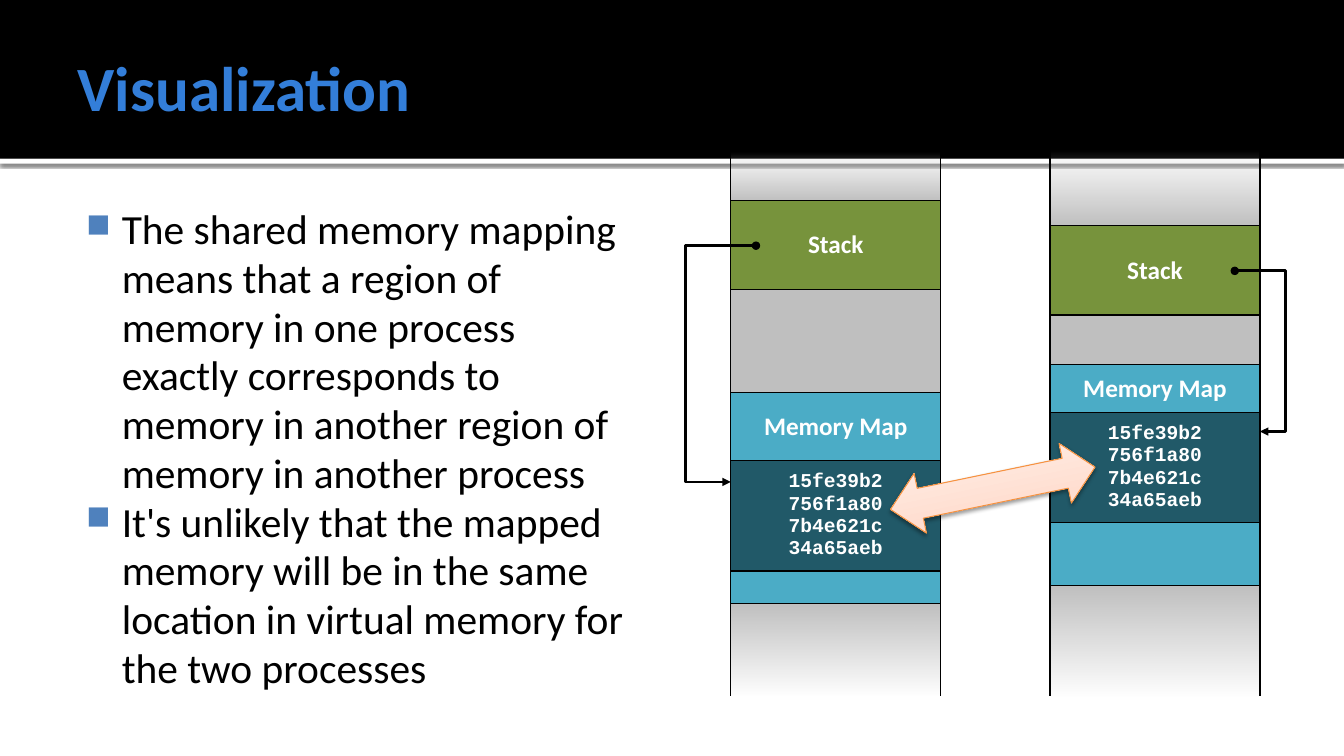
from dataclasses import dataclass

from lxml import etree
from pptx import Presentation
from pptx.dml.color import RGBColor
from pptx.enum.shapes import MSO_CONNECTOR, MSO_SHAPE
from pptx.enum.text import MSO_ANCHOR, PP_ALIGN
from pptx.oxml import parse_xml
from pptx.oxml.ns import nsdecls, qn
from pptx.util import Pt

ELBOW = MSO_CONNECTOR.ELBOW
RECTANGLE = MSO_SHAPE.RECTANGLE
DOUBLE_ARROW = MSO_SHAPE.LEFT_RIGHT_ARROW
MIDDLE = MSO_ANCHOR.MIDDLE
CENTER = PP_ALIGN.CENTER

BLACK = RGBColor(0x00, 0x00, 0x00)
WHITE = RGBColor(0xFF, 0xFF, 0xFF)
TITLE_BLUE = RGBColor(0x33, 0x7E, 0xD9)
BULLET_BLUE = RGBColor(0x4F, 0x81, 0xBD)
UNUSED_GRAY = RGBColor(0xBF, 0xBF, 0xBF)
STACK_GREEN = RGBColor(0x77, 0x93, 0x3C)
MAP_TEAL = RGBColor(0x4B, 0xAC, 0xC6)
SHARED_TEAL = RGBColor(0x21, 0x59, 0x68)
ARROW_LINE = RGBColor(0xF6, 0x92, 0x40)
ARROW_DARK = RGBColor(0xFF, 0xD2, 0xBD)
ARROW_MID = RGBColor(0xFF, 0xDE, 0xD0)
ARROW_PALE = RGBColor(0xFF, 0xF2, 0xED)

BODY_FONT = "Calibri"
CODE_FONT = "Courier New"
COLUMN_WIDTH = 200


@dataclass
class Stop:
    """Gradient stop; position and opacity in percent."""
    position: int
    color: RGBColor
    opacity: int = 100


@dataclass
class Region:
    """Kind of memory region; a fading region has gradient stops."""
    color: RGBColor
    text: str = ""
    font: str = BODY_FONT
    size: int = 18
    stops: tuple[Stop, ...] = ()


@dataclass
class Process:
    left: int
    top: int
    heights: tuple[int, ...]


@dataclass
class Pointer:
    """Elbow from the stack to the shared region, turning at bend_x."""
    start: tuple[int, int]
    end: tuple[int, int]
    bend_x: int


REGIONS = (
    Region(UNUSED_GRAY, stops=(Stop(0, UNUSED_GRAY, 0), Stop(100, UNUSED_GRAY))),
    Region(STACK_GREEN, "Stack"),
    Region(UNUSED_GRAY),
    Region(MAP_TEAL, "Memory Map"),
    Region(SHARED_TEAL, "15fe39b2\n756f1a80\n7b4e621c\n34a65aeb", CODE_FONT, 14),
    Region(MAP_TEAL),
    Region(UNUSED_GRAY, stops=(Stop(0, UNUSED_GRAY), Stop(100, UNUSED_GRAY, 0))),
)
PROCESSES = (
    Process(1000, 143, (72, 85, 47, 46, 105, 60, 105)),
    Process(696, 145, (46, 85, 98, 65, 105, 31, 88)),
)
POINTERS = (
    Pointer((720, 234), (696, 459), 653),
    Pointer((1176, 258), (1200, 411), 1224),
)
POINTS = (
    "The shared memory mapping means that a region of memory in one process "
    "exactly corresponds to memory in another region of memory in another process",
    "It's unlikely that the mapped memory will be in the same location in "
    "virtual memory for the two processes",
)


def px(length: int) -> int:
    return length * 9525


def set_font(paragraph, font: str, size: float, color: RGBColor, bold: bool = False) -> None:
    paragraph.font.name = font
    paragraph.font.size = Pt(size)
    paragraph.font.bold = bold
    paragraph.font.color.rgb = color


def gradient(stops: tuple[Stop, ...], angle: int):
    listing = "".join(
        f'<a:gs pos="{s.position * 1000}"><a:srgbClr val="{s.color}">'
        f'<a:alpha val="{s.opacity * 1000}"/></a:srgbClr></a:gs>' for s in stops)
    return parse_xml(f'<a:gradFill {nsdecls("a")} rotWithShape="1"><a:gsLst>{listing}</a:gsLst>'
                     f'<a:lin ang="{angle * 60000}" scaled="0"/></a:gradFill>')


def add_shadow(shape, opacity: int, blur: float, distance: float) -> None:
    shape.shadow.inherit = False
    effects = shape._element.spPr.find(qn("a:effectLst"))
    effects.append(parse_xml(
        f'<a:outerShdw {nsdecls("a")} blurRad="{Pt(blur)}" dist="{Pt(distance)}" dir="5400000" '
        f'algn="t" rotWithShape="0"><a:srgbClr val="{BLACK}"><a:alpha val="{opacity * 1000}"/>'
        '</a:srgbClr></a:outerShdw>'))


def add_bar(slide, top: int, height: int, color: RGBColor):
    bar = slide.shapes.add_shape(RECTANGLE, 0, px(top), px(1280), px(height))
    bar.shadow.inherit = False
    bar.fill.solid()
    bar.fill.fore_color.rgb = color
    bar.line.fill.background()
    return bar


def add_text_frame(slide, box: tuple[int, ...], margins: tuple[int, ...]):
    frame = slide.shapes.add_textbox(*map(px, box)).text_frame
    frame.word_wrap = True
    (frame.margin_left, frame.margin_top,
     frame.margin_right, frame.margin_bottom) = map(px, margins)
    return frame


def add_bullet(paragraph) -> None:
    properties = paragraph._p.get_or_add_pPr()
    properties.set("marL", str(px(46)))
    properties.set("indent", str(px(-34)))
    color = etree.SubElement(properties, qn("a:buClr"))
    etree.SubElement(color, qn("a:srgbClr"), val=str(BULLET_BLUE))
    etree.SubElement(properties, qn("a:buSzPct"), val="80000")
    etree.SubElement(properties, qn("a:buChar"), char="■")


def add_borders(cell, hidden: str) -> None:
    properties = cell._tc.get_or_add_tcPr()
    for side in "LRTB":
        border = etree.SubElement(properties, qn(f"a:ln{side}"), w=str(Pt(1)))
        if side == hidden:
            etree.SubElement(border, qn("a:noFill"))
        else:
            fill = etree.SubElement(border, qn("a:solidFill"))
            etree.SubElement(fill, qn("a:srgbClr"), val=str(BLACK))


def add_process(slide, process: Process) -> None:
    table = slide.shapes.add_table(len(REGIONS), 1, px(process.left), px(process.top),
                                   px(COLUMN_WIDTH), px(sum(process.heights))).table
    table.first_row = table.horz_banding = False
    last = len(REGIONS) - 1
    for row, (region, height) in enumerate(zip(REGIONS, process.heights)):
        table.rows[row].height = px(height)
        cell = table.cell(row, 0)
        cell.margin_left = cell.margin_right = cell.margin_top = cell.margin_bottom = 0
        cell.vertical_anchor = MIDDLE
        add_borders(cell, {0: "T", last: "B"}.get(row, ""))
        if region.stops:
            cell._tc.tcPr.append(gradient(region.stops, 90))
        else:
            cell.fill.solid()
            cell.fill.fore_color.rgb = region.color
        cell.text = region.text
        for paragraph in cell.text_frame.paragraphs:
            paragraph.alignment = CENTER
            set_font(paragraph, region.font, region.size, WHITE, bold=True)


def add_pointer(slide, pointer: Pointer) -> None:
    (x1, y1), (x2, y2) = pointer.start, pointer.end
    elbow = slide.shapes.add_connector(ELBOW, px(x1), px(y1), px(x2), px(y2))
    elbow.line.color.rgb = BLACK
    elbow.line.width = Pt(2)
    bend = round((pointer.bend_x - x1) / (x2 - x1) * 100000)
    properties = elbow._element.spPr
    guides = properties.find(qn("a:prstGeom")).get_or_add_avLst()
    etree.SubElement(guides, qn("a:gd"), name="adj1", fmla=f"val {bend}")
    line = elbow.line._get_or_add_ln()
    etree.SubElement(line, qn("a:headEnd"), type="oval")
    etree.SubElement(line, qn("a:tailEnd"), type="triangle")
    etree.SubElement(properties, qn("a:effectLst"))


def main() -> None:
    presentation = Presentation()
    presentation.slide_width, presentation.slide_height = px(1280), px(720)
    slide = presentation.slides.add_slide(presentation.slide_layouts[6])

    # Header band and title
    add_shadow(add_bar(slide, 151, 5, WHITE), 60, 2.5, 0.8)
    add_bar(slide, 0, 151, BLACK)
    title = add_text_frame(slide, (64, 16, 1152, 132), (10, 5, 5, 5))
    title.vertical_anchor = MIDDLE
    title.text = "Visualization"
    set_font(title.paragraphs[0], BODY_FONT, 45, TITLE_BLUE, bold=True)

    # Explanation
    explanation = add_text_frame(slide, (64, 186, 544, 486), (6, 10, 10, 5))
    explanation.text = "\n".join(POINTS)
    for paragraph in explanation.paragraphs:
        add_bullet(paragraph)
        paragraph.line_spacing = 0.98
        set_font(paragraph, BODY_FONT, 29.6, BLACK)

    # Memory of both processes, with pointers into the shared region
    for process in PROCESSES:
        add_process(slide, process)
    for pointer in POINTERS:
        add_pointer(slide, pointer)

    # Correspondence between the shared regions
    match = slide.shapes.add_shape(DOUBLE_ARROW, px(846), px(436), px(199), px(58))
    match.rotation = 348.3
    match.line.color.rgb = ARROW_LINE
    match.line.width = Pt(0.75)
    add_shadow(match, 38, 3.1, 1.6)
    shades = (Stop(0, ARROW_DARK), Stop(35, ARROW_MID), Stop(100, ARROW_PALE))
    match._element.spPr.find(qn("a:prstGeom")).addnext(gradient(shades, 270))

    presentation.save("out.pptx")


if __name__ == "__main__":
    main()
